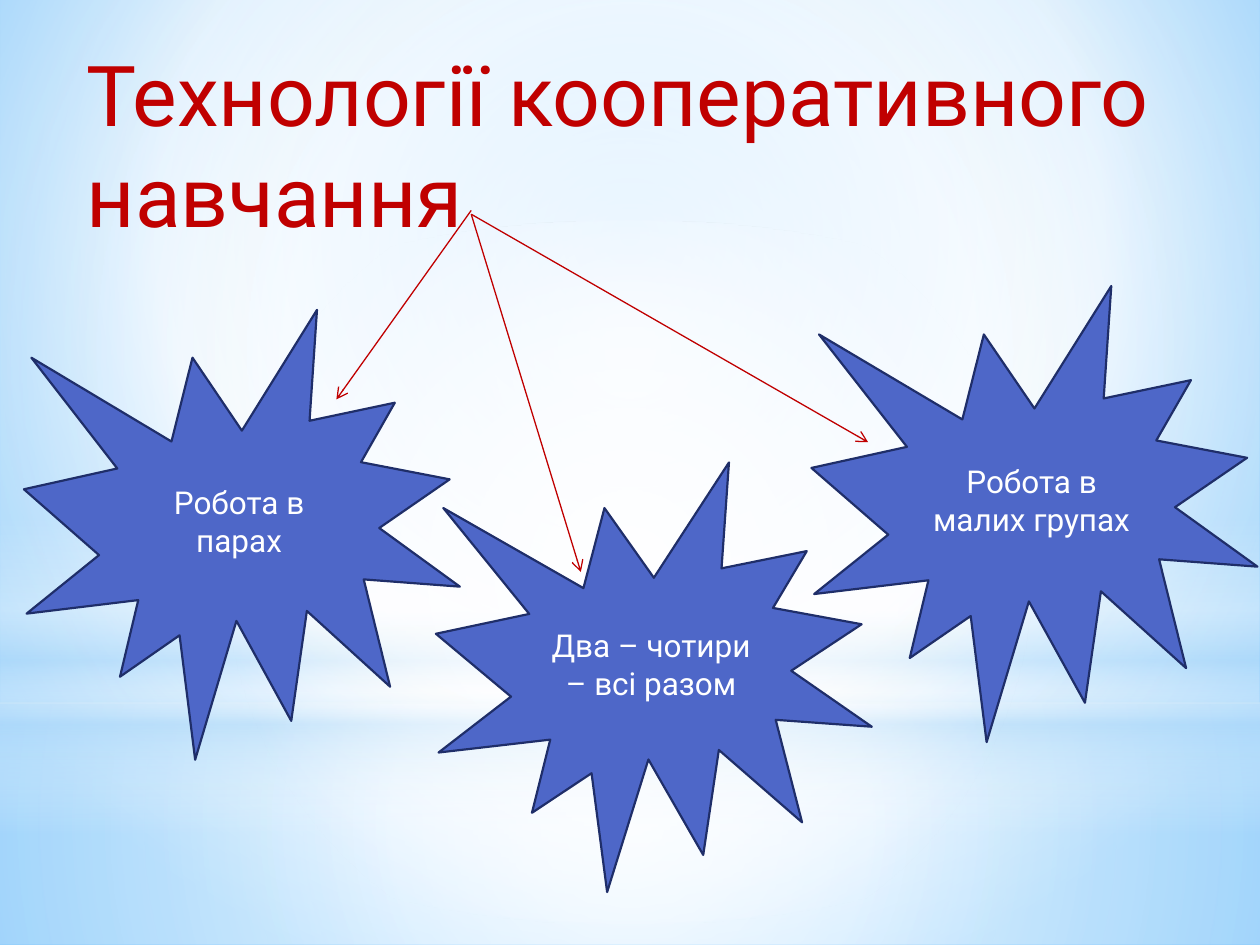
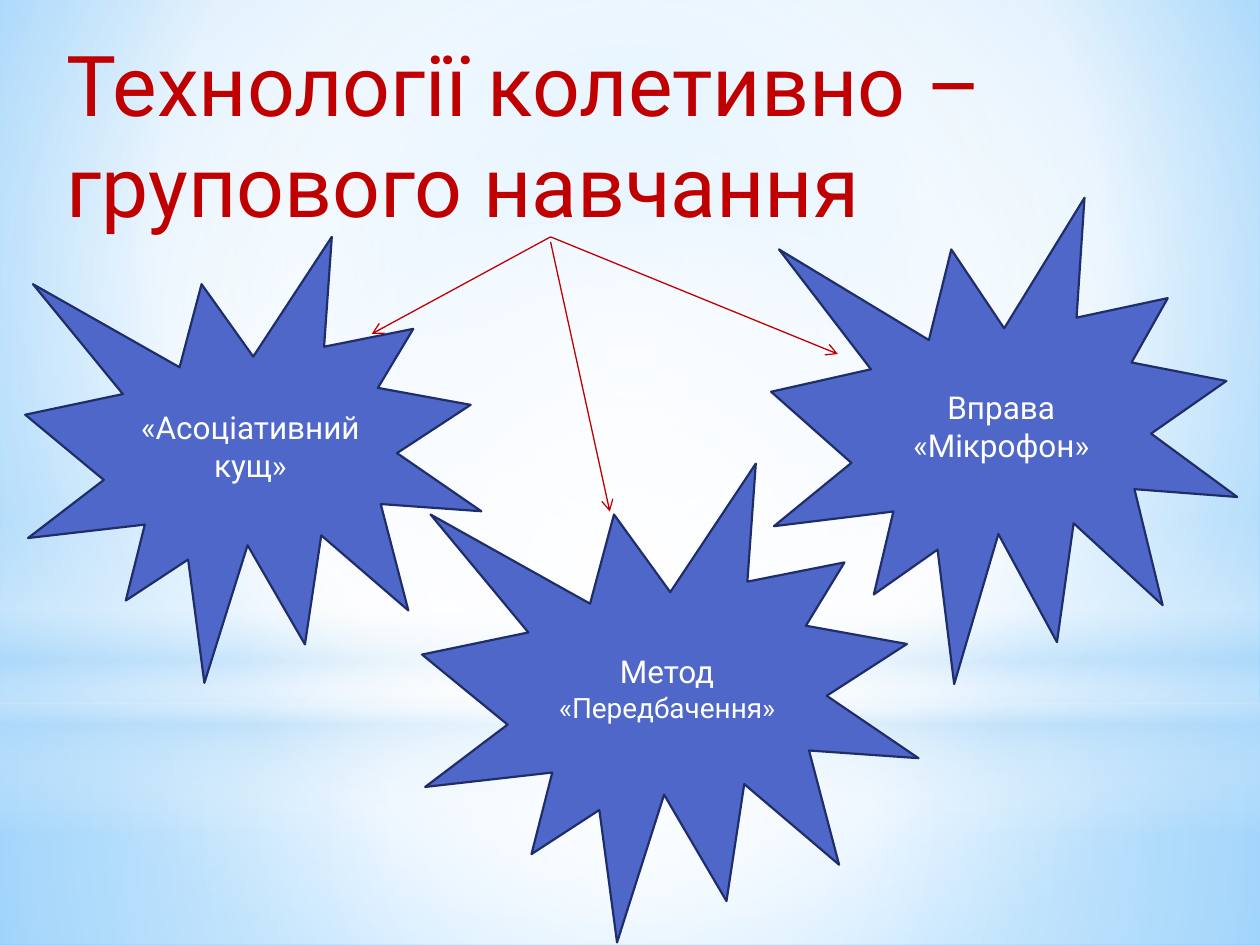
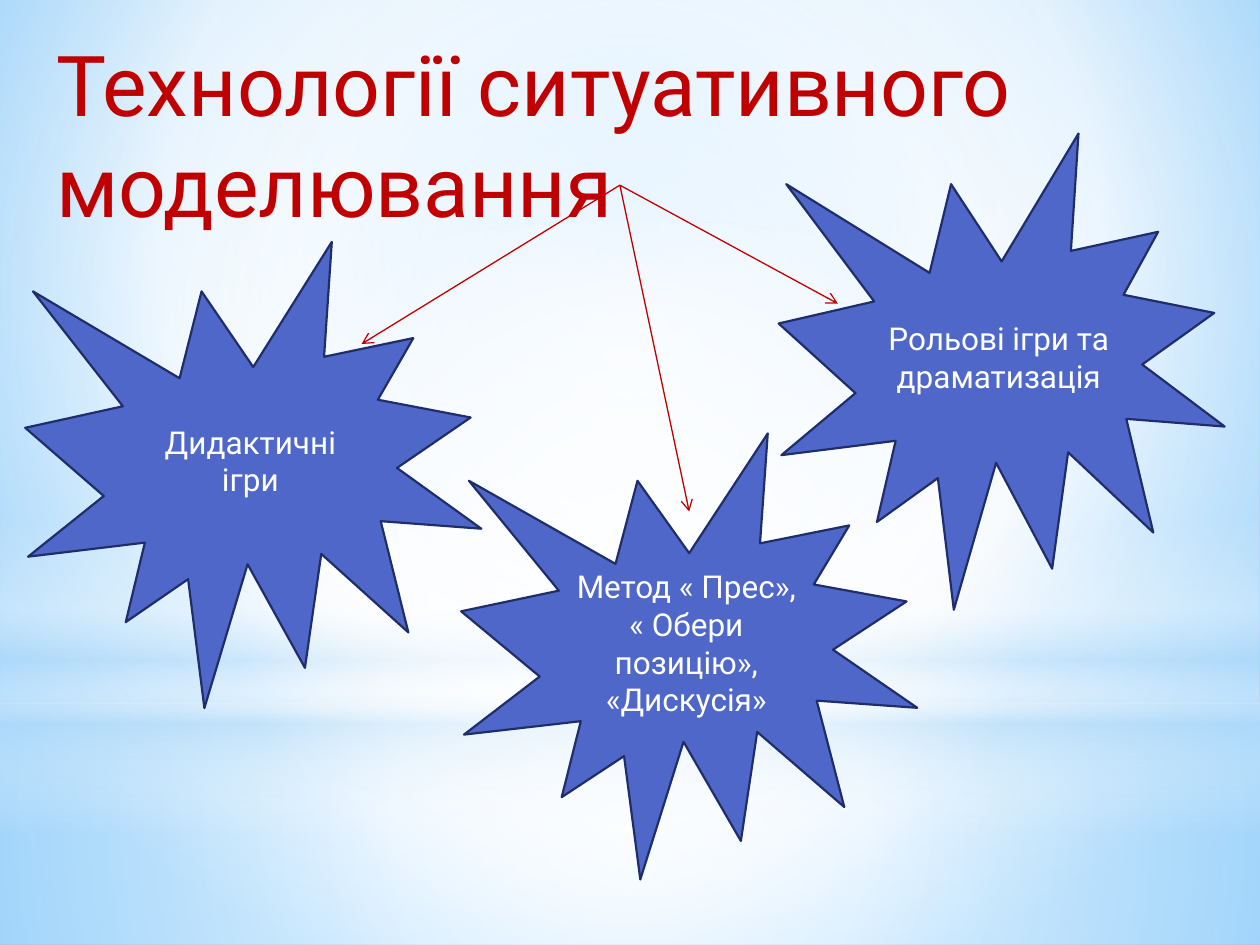
"""Build three slides on cooperative, group and situational teaching technologies."""
from lxml.etree import SubElement
from pptx import Presentation
from pptx.dml.color import RGBColor
from pptx.enum.shapes import MSO_CONNECTOR as Connector, MSO_SHAPE as Shape
from pptx.enum.text import MSO_ANCHOR as Anchor, MSO_AUTO_SIZE as AutoSize, PP_ALIGN as Align
from pptx.oxml import parse_xml
from pptx.oxml.ns import nsdecls, qn
from pptx.util import Inches, Pt

FONT = "Roboto"
RED = RGBColor(0xC0, 0x00, 0x00)
STAR_BLUE = RGBColor(0x4E, 0x67, 0xC8)
STAR_EDGE = RGBColor(0x1F, 0x2E, 0x69)
WHITE = RGBColor(0xFF, 0xFF, 0xFF)
MIST = RGBColor(0xB4, 0xDC, 0xFA)
SKY = RGBColor(0x9E, 0xD5, 0xFF)
DEEP_SKY = RGBColor(0x5B, 0xB9, 0xFF)

CENTRE = (50, 50, 50, 50)
BACKGROUND_STOPS = [(0, SKY, 100), (60, WHITE, 100), (100, DEEP_SKY, 100)]
BACKGROUND_FOCUS = (20, 10, 20, 60)
GLOWS = [
    (Shape.RECTANGLE, (0, 5.58, 10, 1.92), CENTRE,
     [(0, WHITE, 91), (37, WHITE, 76), (100, MIST, 79)]),
    (Shape.RECTANGLE, (0, 0, 10, 5.58), CENTRE,
     [(0, WHITE, 89), (48, WHITE, 62), (100, MIST, 79)]),
    (Shape.RECTANGLE, (0, 4.12, 10, 2.5), None,
     [(0, WHITE, 0), (29, WHITE, 30), (45, MIST, 40),
      (55, WHITE, 26), (65, MIST, 60), (100, WHITE, 0)]),
    (Shape.OVAL, (0, 1.75, 10, 5.58), CENTRE, [(0, WHITE, 100), (56, WHITE, 0)]),
]

SLIDES = [
    {
        "title": ("Технології кооперативного навчання", (0.59, 0.29, 9.13, 2.02)),
        "stars": [
            ((0.19, 2.46, 3.46, 3.57), [[("Робота в парах", 18)]]),
            ((6.44, 2.27, 3.54, 3.62), [[("Робота в малих групах", 18)]]),
            ((3.46, 3.67, 3.46, 3.41), [[("Два – чотири – всі разом", 18)]]),
        ],
        "arrows": [((3.74, 1.67), (2.67, 3.17)), ((3.74, 1.7), (6.89, 3.51)),
                   ((3.74, 1.7), (4.61, 4.54))],
    },
    {
        "title": ("Технології колетивно – групового навчання", (0.43, 0.21, 9.37, 1.72)),
        "stars": [
            ((0.2, 1.88, 3.62, 3.54), [[("«Асоціативний кущ»", 18)]]),
            ((6.12, 1.57, 3.7, 3.86), [[("Вправа «Мікрофон»", 18)]]),
            ((3.35, 3.68, 3.94, 3.8), [[("Метод ", 18), ("«Передбачення»", 16)]]),
        ],
        "arrows": [((4.37, 1.92), (4.84, 4.06)), ((4.37, 1.88), (2.95, 2.65)),
                   ((4.37, 1.88), (6.65, 2.81))],
    },
    {
        "title": ("Технології ситуативного моделювання", (0.35, 0.21, 9.53, 1.72)),
        "stars": [
            ((0.2, 1.92, 3.62, 3.7), [[("Дидактичні ігри", 18)]]),
            ((6.18, 1.06, 3.54, 3.78), [[("Рольові ігри та драматизація", 18)]]),
            ((3.66, 3.44, 3.62, 3.54),
             [[("Метод « Прес»,", 18)], [("« Обери позицію», «Дискусія»", 18)]]),
        ],
        "arrows": [((4.92, 1.47), (6.65, 2.41)), ((4.92, 1.47), (2.87, 2.73)),
                   ((4.92, 1.47), (5.47, 4.06))],
    },
]


def inches(lengths):
    return [Inches(length) for length in lengths]


def set_gradient(solid_fill, stops, focus):
    gradient = parse_xml(f'<a:gradFill {nsdecls("a")} rotWithShape="1"/>')
    stop_list = SubElement(gradient, qn("a:gsLst"))
    for position, color, opacity in stops:
        stop = SubElement(stop_list, qn("a:gs"), pos=str(position * 1000))
        color_element = SubElement(stop, qn("a:srgbClr"), val=str(color))
        if opacity < 100:
            SubElement(color_element, qn("a:alpha"), val=str(opacity * 1000))
    if focus:
        circle = SubElement(gradient, qn("a:path"), path="circle")
        edges = {edge: str(share * 1000) for edge, share in zip("ltrb", focus)}
        SubElement(circle, qn("a:fillToRect"), **edges)
    else:
        SubElement(gradient, qn("a:lin"), ang="5400000", scaled="0")
    solid_fill.getparent().replace(solid_fill, gradient)


def decorate_master(master, slide):
    """Set the master background and move the glow shapes from the slide to the master."""
    master.background.fill.solid()
    solid_fill = master.element.xpath("p:cSld/p:bg/p:bgPr/a:solidFill")[0]
    set_gradient(solid_fill, BACKGROUND_STOPS, BACKGROUND_FOCUS)
    for shape_id, (kind, box, focus, stops) in enumerate(GLOWS, start=20):
        glow = slide.shapes.add_shape(kind, *inches(box))
        glow.shadow.inherit = False
        glow.line.fill.background()
        glow.fill.solid()
        set_gradient(glow.element.spPr.find(qn("a:solidFill")), stops, focus)
        glow.element.nvSpPr.cNvPr.set("id", str(shape_id))
        master.shapes.element.append(glow.element)


def add_title(slide, text, box):
    frame = slide.shapes.add_textbox(*inches(box)).text_frame
    frame.word_wrap = True
    frame.auto_size = AutoSize.SHAPE_TO_FIT_TEXT
    paragraph = frame.paragraphs[0]
    paragraph.text = text
    paragraph.font.name = FONT
    paragraph.font.size = Pt(48)
    paragraph.font.color.rgb = RED


def add_star(slide, box, paragraphs):
    star = slide.shapes.add_shape(Shape.EXPLOSION1, *inches(box))
    star.shadow.inherit = False
    star.fill.solid()
    star.fill.fore_color.rgb = STAR_BLUE
    star.line.color.rgb = STAR_EDGE
    star.line.width = Pt(1.25)
    frame = star.text_frame
    frame.word_wrap = True
    frame.vertical_anchor = Anchor.MIDDLE
    for index, runs in enumerate(paragraphs):
        paragraph = frame.add_paragraph() if index else frame.paragraphs[0]
        paragraph.alignment = Align.CENTER
        paragraph.font.name = FONT
        paragraph.font.color.rgb = WHITE
        for text, size in runs:
            run = paragraph.add_run()
            run.text = text
            run.font.size = Pt(size)


def add_arrow(slide, start, end):
    arrow = slide.shapes.add_connector(Connector.STRAIGHT, *inches(start + end))
    arrow.line.color.rgb = RED
    arrow.line.width = Pt(0.75)
    properties = arrow.element.spPr
    SubElement(properties.find(qn("a:ln")), qn("a:tailEnd"), type="arrow")
    SubElement(properties, qn("a:effectLst"))


def main():
    presentation = Presentation()
    presentation.slide_width = Inches(10)
    presentation.slide_height = Inches(7.5)
    blank = presentation.slide_layouts[6]
    for index, content in enumerate(SLIDES):
        slide = presentation.slides.add_slide(blank)
        if index == 0:
            decorate_master(presentation.slide_master, slide)
        add_title(slide, *content["title"])
        for star in content["stars"]:
            add_star(slide, *star)
        for start, end in content["arrows"]:
            add_arrow(slide, start, end)
    presentation.save("out.pptx")


if __name__ == "__main__":
    main()
